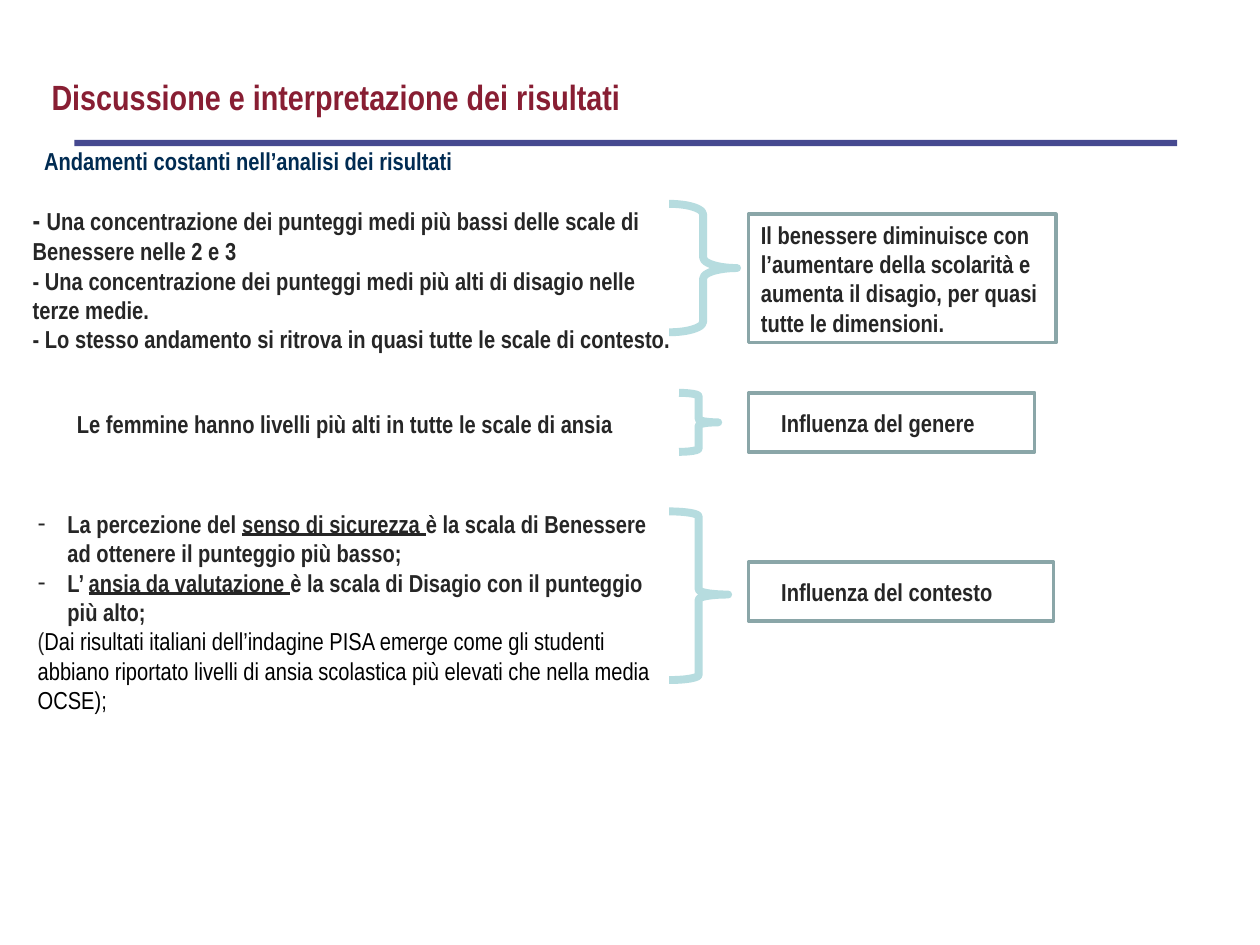
import pptx
import pptx.util
import pptx.dml.color
import pptx.enum.shapes
import pptx.enum.text
import lxml.etree
from pptx.util import Cm
from pptx.oxml.ns import qn

COLOURS = {
    "title": "881E33",
    "subtitle": "002B52",
    "rule": "464990",
    "text": "262626",
    "note": "000000",
    "brace": "B6DCDF",
    "frame": "8AA6A8",
}
SHAPES = pptx.enum.shapes.MSO_SHAPE
ANCHORS = pptx.enum.text.MSO_ANCHOR


def colour(name):
    return pptx.dml.color.RGBColor.from_string(COLOURS[name])


def write(frame, paragraphs, name="text", size=14):
    frame.word_wrap = True
    for index, parts in enumerate(paragraphs):
        paragraph = frame.paragraphs[0] if index == 0 else frame.add_paragraph()
        paragraph.alignment = pptx.enum.text.PP_ALIGN.LEFT
        for part in parts:
            run = paragraph.add_run()
            run.text = part
            run.font.name = "Arial Narrow"
            run.font.size = pptx.util.Pt(size)
            run.font.bold = True
            run.font.color.rgb = colour(name)


deck = pptx.Presentation()
deck.slide_width = Cm(25.4)
deck.slide_height = Cm(19.05)
slide = deck.slides.add_slide(deck.slide_layouts[6])
shapes = slide.shapes

rule = shapes.add_shape(SHAPES.RECTANGLE, Cm(1.5), Cm(2.82), Cm(22.23), Cm(0.13))
rule.shadow.inherit = False
rule.fill.solid()
rule.fill.fore_color.rgb = colour("rule")
rule.line.fill.background()

title = shapes.add_textbox(Cm(0.79), Cm(1.4), Cm(13), Cm(1.12)).text_frame
write(title, [["Discussione e interpretazione dei risultati"]], "title", 20)

subtitle = shapes.add_textbox(Cm(0.89), Cm(0.76), Cm(23.24), Cm(2.77)).text_frame
subtitle.margin_left = subtitle.margin_right = 0
subtitle.margin_top = subtitle.margin_bottom = 0
subtitle.vertical_anchor = ANCHORS.BOTTOM
write(subtitle, [["Andamenti costanti nell’analisi dei risultati"]], "subtitle")

trends = shapes.add_textbox(Cm(0.41), Cm(3.96), Cm(13.69), Cm(4.52)).text_frame
write(trends, [
    ["- ", "Una concentrazione dei punteggi medi più bassi delle scale di Benessere nelle 2 e 3"],
    ["- Una concentrazione dei punteggi medi più alti di disagio nelle terze medie."],
    ["- Lo stesso andamento si ritrova in quasi tutte le scale di contesto."],
])
trends.paragraphs[0].runs[0].font.size = pptx.util.Pt(16)

gender = shapes.add_textbox(Cm(1.3), Cm(8.13), Cm(12.7), Cm(0.86)).text_frame
write(gender, [["Le femmine hanno livelli più alti in tutte le scale di ansia"]])

context = shapes.add_textbox(Cm(0.51), Cm(10.13), Cm(12.9), Cm(5.56)).text_frame
write(context, [
    ["La percezione del ", "senso di sicurezza ",
     "è la scala di Benessere ad ottenere il punteggio più basso;"],
    ["L’ ", "ansia da valutazione ", "è la scala di Disagio con il punteggio più alto;"],
    ["(", "Dai risultati italiani dell’indagine PISA emerge come gli studenti abbiano "
     "riportato livelli di ansia scolastica più elevati che nella media OCSE);"],
])
for finding in context.paragraphs[:2]:
    finding.runs[1].font.underline = True
    properties = finding._p.get_or_add_pPr()
    properties.set("marL", str(Cm(0.6)))
    properties.set("indent", str(-Cm(0.6)))
    lxml.etree.SubElement(properties, qn("a:buFont")).set("typeface", "Arial")
    lxml.etree.SubElement(properties, qn("a:buChar")).set("char", "-")
for remark in context.paragraphs[2].runs:
    remark.font.bold = False
context.paragraphs[2].runs[1].font.color.rgb = colour("note")

braces = [
    (13.49, 4.11, 1.37, 2.59, 0.155, 0.5),
    (13.69, 7.92, 0.79, 1.19, 0.083, 0.5),
    (13.49, 10.31, 1.19, 3.4, 0.083, 0.493),
]
for left, top, width, height, curl, tip in braces:
    brace = shapes.add_shape(SHAPES.RIGHT_BRACE, Cm(left), Cm(top), Cm(width), Cm(height))
    brace.adjustments[0] = curl
    brace.adjustments[1] = tip
    brace.shadow.inherit = False
    brace.fill.background()
    brace.line.color.rgb = colour("brace")
    brace.line.width = pptx.util.Pt(4.5)

conclusions = [
    (4.32, 6.2, 2.59, 0.25, "Il benessere diminuisce con l’aumentare della scolarità e "
     "aumenta il disagio, per quasi tutte le dimensioni."),
    (7.92, 5.77, 1.19, 0.66, "Influenza del genere"),
    (11.33, 6.15, 1.19, 0.66, "Influenza del contesto"),
]
for top, width, height, inset, wording in conclusions:
    conclusion = shapes.add_shape(SHAPES.RECTANGLE, Cm(15.09), Cm(top), Cm(width), Cm(height))
    conclusion.shadow.inherit = False
    conclusion.fill.background()
    conclusion.line.color.rgb = colour("frame")
    conclusion.line.width = pptx.util.Pt(2)
    conclusion.text_frame.margin_left = Cm(inset)
    conclusion.text_frame.vertical_anchor = ANCHORS.MIDDLE
    write(conclusion.text_frame, [[wording]])

deck.save("out.pptx")
